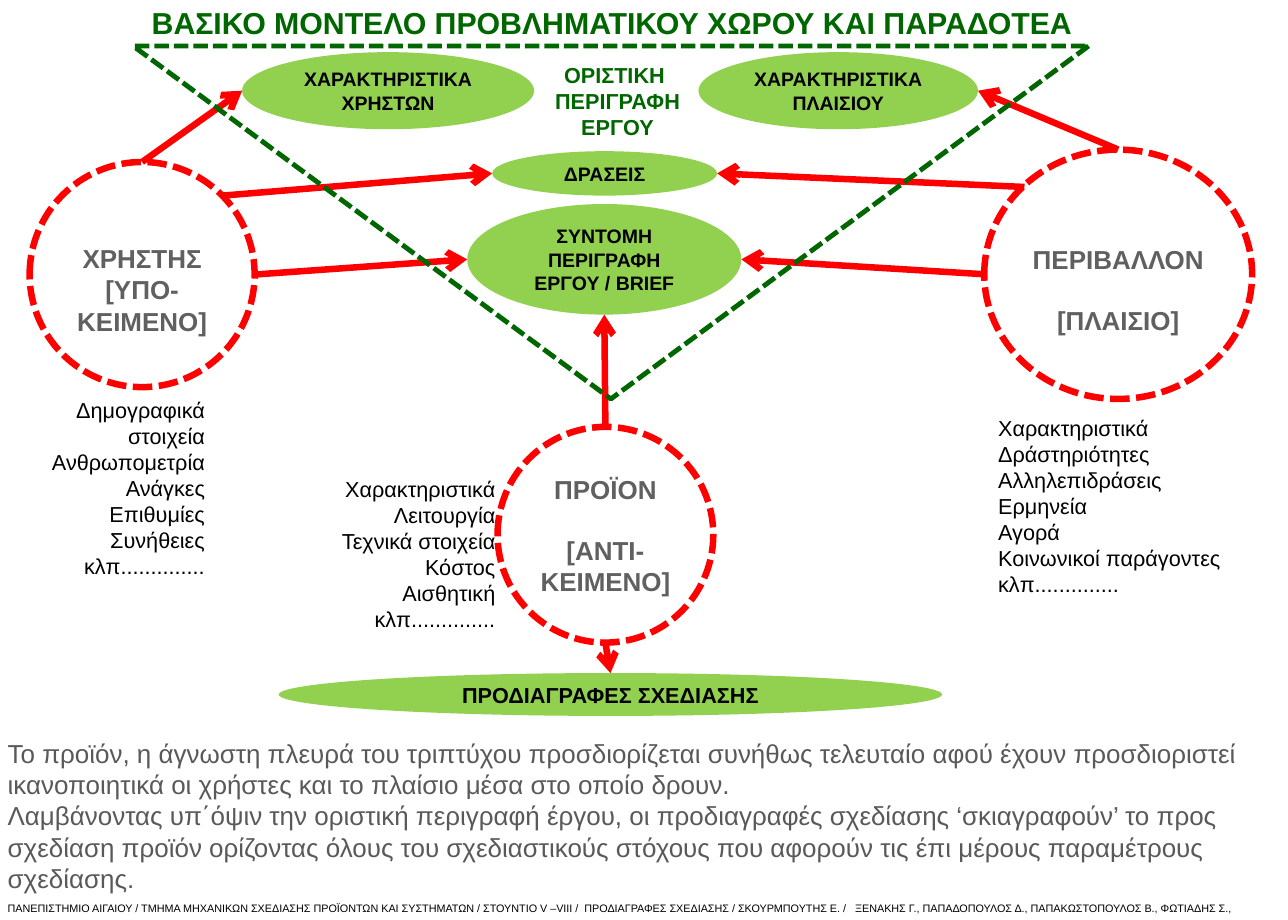
import pptx
import pptx.util
import pptx.dml.color
import pptx.enum.dml
import pptx.enum.shapes
import pptx.enum.text
import pptx.oxml.ns
from lxml import etree

RGBColor = pptx.dml.color.RGBColor
SHAPE = pptx.enum.shapes.MSO_SHAPE
ALIGN = pptx.enum.text.PP_ALIGN
Pt = pptx.util.Pt

GREEN, DARK_GREEN, RED = RGBColor(0x92, 0xD0, 0x50), RGBColor(0, 0x66, 0), RGBColor(0xFF, 0, 0)
BLACK, GREY, BODY_GREY = RGBColor(0, 0, 0), RGBColor(0x60, 0x60, 0x60), RGBColor(0x59, 0x59, 0x59)

WIDTH, HEIGHT = pptx.util.Inches(16.54), pptx.util.Inches(11.81)
BLANK_LINE = Pt(27.6)
INSET = pptx.util.Inches(0.05)

# Boxes are left, top, width, height in percent of the slide.
OVALS = {
    "specs": ((21.64, 73.16, 51.51, 4.66), "ΠΡΟΔΙΑΓΡΑΦΕΣ ΣΧΕΔΙΑΣΗΣ", 20),
    "brief": ((36.28, 22.18, 21.28, 12.02), "ΣΥΝΤΟΜΗ ΠΕΡΙΓΡΑΦΗ ΕΡΓΟΥ / BRIEF", 18),
    "actions": ((38.21, 16.43, 17.47, 4.83), "ΔΡΑΣΕΙΣ", 18),
    "user traits": ((18.8, 5.67, 22.67, 8.38), "ΧΑΡΑΚΤΗΡΙΣΤΙΚΑ ΧΡΗΣΤΩΝ", 18),
    "context traits": ((54.23, 5.67, 21.7, 8.38), "ΧΑΡΑΚΤΗΡΙΣΤΙΚΑ ΠΛΑΙΣΙΟΥ", 18),
}
CIRCLES = {
    "user": ((2.3, 17.61, 17.47, 24.47), ["ΧΡΗΣΤΗΣ", "[ΥΠΟ-ΚΕΙΜΕΝΟ]"], BLANK_LINE, 0),
    "product": ((38.63, 46.4, 16.75, 23.45), ["ΠΡΟΪΟΝ", "[ΑΝΤΙ-ΚΕΙΜΕΝΟ]"], 0, BLANK_LINE),
    "context": ((76.42, 16.26, 20.8, 27.1), ["ΠΕΡΙΒΑΛΛΟΝ", "[ΠΛΑΙΣΙΟ]"], BLANK_LINE, BLANK_LINE),
}
SITES = {"top": (0.5, 0), "left": (0, 0.5), "bottom": (0.5, 1), "right": (1, 0.5),
         "upper left": (0.15, 0.15), "upper right": (0.85, 0.15)}
ARROWS = [
    ("user", "right", "brief", "left"),
    ("product", "top", "brief", "bottom"),
    ("context", "left", "brief", "right"),
    ("context", "upper left", "actions", "right"),
    ("user", "upper right", "actions", "left"),
    ("product", "bottom", "specs", "top"),
    ("user", "top", "user traits", "left"),
    ("context", "top", "context traits", "right"),
]
TRIANGLE = (10.34, 5, 74.18, 38.36)
TEXTS = [
    ((0, 97.63, 97.4, 2.29), 10, BLACK, False, ALIGN.LEFT, False, [
        "ΠΑΝΕΠΙΣΤΗΜΙΟ ΑΙΓΑΙΟΥ / ΤΜΗΜΑ ΜΗΧΑΝΙΚΩΝ ΣΧΕΔΙΑΣΗΣ ΠΡΟΪΟΝΤΩΝ ΚΑΙ ΣΥΣΤΗΜΑΤΩΝ / "
        "ΣΤΟΥΝΤΙΟ V –VIII /  ΠΡΟΔΙΑΓΡΑΦΕΣ ΣΧΕΔΙΑΣΗΣ / ΣΚΟΥΡΜΠΟΥΤΗΣ Ε. /   ΞΕΝΑΚΗΣ Γ., "
        "ΠΑΠΑΔΟΠΟΥΛΟΣ Δ., ΠΑΠΑΚΩΣΤΟΠΟΥΛΟΣ Β., ΦΩΤΙΑΔΗΣ Σ.,"]),
    ((6.53, 0, 82.59, 4.83), 28, DARK_GREEN, True, ALIGN.CENTER, True, [
        "ΒΑΣΙΚΟ ΜΟΝΤΕΛΟ ΠΡΟΒΛΗΜΑΤΙΚΟΥ ΧΩΡΟΥ ΚΑΙ ΠΑΡΑΔΟΤΕΑ "]),
    ((0, 79.76, 98.67, 21.34), 24, BODY_GREY, False, ALIGN.LEFT, True, [
        "Το προϊόν, η άγνωστη πλευρά του τριπτύχου προσδιορίζεται συνήθως τελευταίο αφού "
        "έχουν προσδιοριστεί ικανοποιητικά οι χρήστες και το πλαίσιο μέσα στο οποίο δρουν.",
        "Λαμβάνοντας υπ΄όψιν την οριστική περιγραφή έργου, οι προδιαγραφές σχεδίασης "
        "‘σκιαγραφούν’ το προς σχεδίαση προϊόν ορίζοντας όλους του σχεδιαστικούς στόχους "
        "που αφορούν τις έπι μέρους παραμέτρους σχεδίασης."]),
    ((0, 42.76, 16.51, 20.83), 20, BLACK, False, ALIGN.RIGHT, True, [
        "Δημογραφικά στοιχεία", "Ανθρωπομετρία", "Ανάγκες", "Επιθυμίες", "Συνήθειες",
        "κλπ.............."]),
    ((24.49, 51.31, 14.57, 17.95), 20, BLACK, False, ALIGN.RIGHT, True, [
        "Χαρακτηριστικά", "Λειτουργία", "Τεχνικά στοιχεία", "Κόστος", "Αισθητική",
        "κλπ.............."]),
    ((76.9, 44.71, 18.62, 20.83), 20, BLACK, False, ALIGN.LEFT, False, [
        "Χαρακτηριστικά", "Δράστηριότητες", "Αλληλεπιδράσεις", "Ερμηνεία", "Αγορά",
        "Κοινωνικοί παράγοντες", "κλπ.............."]),
    ((42.44, 6.35, 11, 9.4), 20, DARK_GREEN, True, ALIGN.CENTER, False, [
        "ΟΡΙΣΤΙΚΗ ", "ΠΕΡΙΓΡΑΦΗ", "ΕΡΓΟΥ"]),
]


def place(box):
    x, y, w, h = box
    return [int(v * side / 100) for v, side in ((x, WIDTH), (y, HEIGHT), (w, WIDTH), (h, HEIGHT))]


def site(name, side):
    x, y, w, h = place({**OVALS, **CIRCLES}[name][0])
    fx, fy = SITES[side]
    return int(x + w * fx), int(y + h * fy)


def write(tf, lines, size, color, bold, align, gap=0):
    for i, line in enumerate(lines):
        p = tf.add_paragraph() if i else tf.paragraphs[0]
        p.alignment = align
        if i and gap:
            p.space_before = gap
        r = p.add_run()
        r.text = line
        r.font.name, r.font.size, r.font.bold = "Arial", Pt(size), bold
        r.font.color.rgb = color


def add_shape(slide, kind, box, fill=None, line=None, width=0):
    s = slide.shapes.add_shape(kind, *place(box))
    s.shadow.inherit = False
    if fill is None:
        s.fill.background()
    else:
        s.fill.solid()
        s.fill.fore_color.rgb = fill
    if line is None:
        s.line.fill.background()
    else:
        s.line.color.rgb = line
        s.line.width = Pt(width)
        s.line.dash_style = pptx.enum.dml.MSO_LINE.SQUARE_DOT
    s.text_frame.word_wrap = True
    s.text_frame.vertical_anchor = pptx.enum.text.MSO_ANCHOR.MIDDLE
    return s


def add_arrow(slide, start, end):
    s = slide.shapes.add_connector(pptx.enum.shapes.MSO_CONNECTOR.STRAIGHT, *start, *end)
    s.line.color.rgb = RED
    s.line.width = Pt(6)
    qn = pptx.oxml.ns.qn
    etree.SubElement(s.line._get_or_add_ln(), qn("a:tailEnd"), type="arrow")
    etree.SubElement(s._element.spPr, qn("a:effectLst"))


def main():
    """Build the slide of the basic problem-space model."""
    prs = pptx.Presentation()
    prs.slide_width, prs.slide_height = WIDTH, HEIGHT
    slide = prs.slides.add_slide(prs.slide_layouts[6])
    for box, text, size in OVALS.values():
        s = add_shape(slide, SHAPE.OVAL, box, fill=GREEN)
        write(s.text_frame, [text], size, BLACK, True, ALIGN.CENTER)
    for origin, start, target, end in ARROWS:
        add_arrow(slide, site(origin, start), site(target, end))
    for box, lines, lead, gap in CIRCLES.values():
        s = add_shape(slide, SHAPE.OVAL, box, line=RED, width=6)
        s.text_frame.margin_top = INSET + lead
        write(s.text_frame, lines, 24, GREY, True, ALIGN.CENTER, gap)
    s = add_shape(slide, SHAPE.ISOSCELES_TRIANGLE, TRIANGLE, line=DARK_GREEN, width=4.5)
    s.rotation = 180
    for box, size, color, bold, align, wrap, lines in TEXTS:
        tf = slide.shapes.add_textbox(*place(box)).text_frame
        tf.word_wrap = wrap
        tf.auto_size = pptx.enum.text.MSO_AUTO_SIZE.SHAPE_TO_FIT_TEXT
        write(tf, lines, size, color, bold, align)
    prs.save("out.pptx")


if __name__ == "__main__":
    main()
